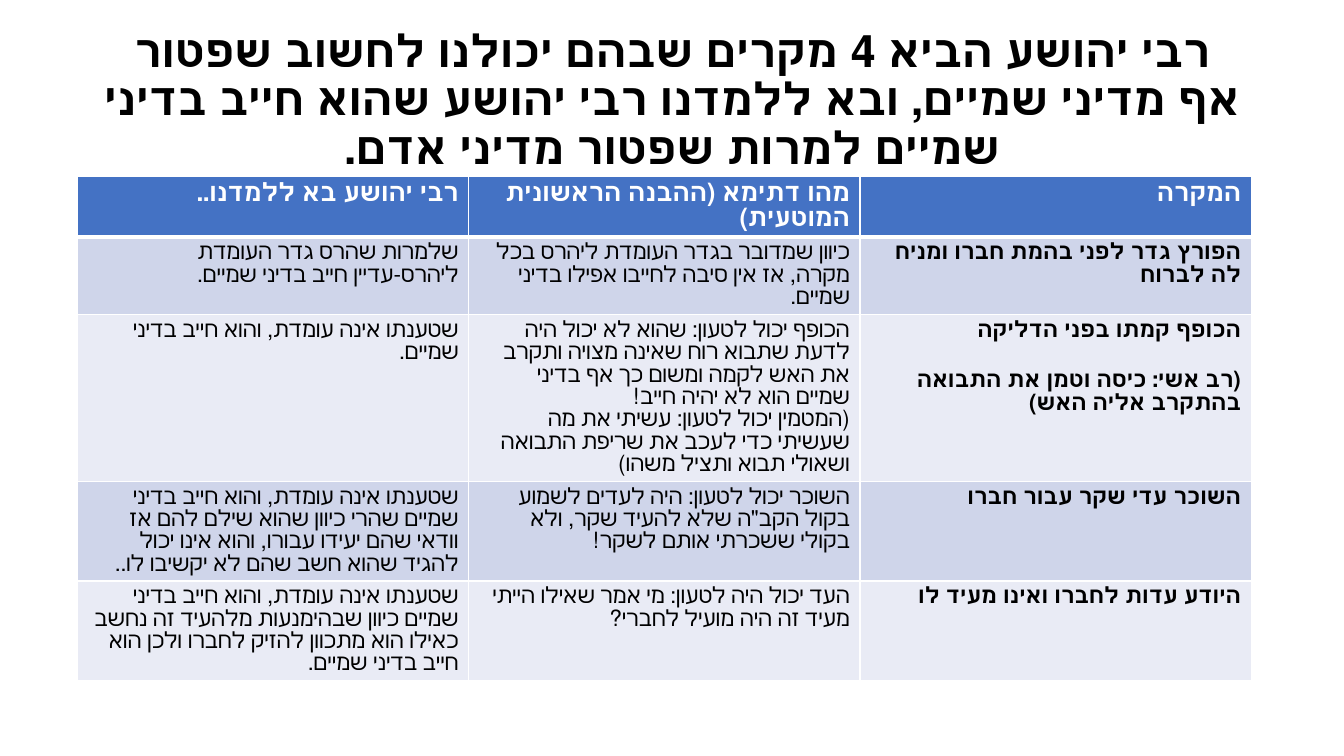
from dataclasses import dataclass

from lxml import etree
from pptx import Presentation
from pptx.dml.color import RGBColor
from pptx.enum.text import MSO_ANCHOR, PP_ALIGN
from pptx.oxml.ns import qn
from pptx.util import Inches, Pt

CENTER, RIGHT = PP_ALIGN.CENTER, PP_ALIGN.RIGHT
MIDDLE = MSO_ANCHOR.MIDDLE

TITLE = "רבי יהושע הביא 4 מקרים שבהם יכולנו לחשוב שפטור אף מדיני שמיים, ובא ללמדנו רבי יהושע שהוא חייב בדיני שמיים למרות שפטור מדיני אדם."

HEADER = ("רבי יהושע בא ללמדנו..", "מהו דתימא (ההבנה הראשונית המוטעית)", "המקרה")
CASES = [
    (
        "שלמרות שהרס גדר העומדת ליהרס-עדיין חייב בדיני שמיים.",
        "כיוון שמדובר בגדר העומדת ליהרס בכל מקרה, אז אין סיבה לחייבו אפילו בדיני שמיים.",
        "הפורץ גדר לפני בהמת חברו ומניח לה לברוח",
    ),
    (
        "שטענתו אינה עומדת, והוא חייב בדיני שמיים.",
        "הכופף יכול לטעון: שהוא לא יכול היה לדעת שתבוא רוח שאינה מצויה ותקרב את האש לקמה ומשום כך אף בדיני שמיים הוא לא יהיה חייב!\n"
        "(המטמין יכול לטעון: עשיתי את מה שעשיתי כדי לעכב את שריפת התבואה ושאולי תבוא ותציל משהו)",
        "הכופף קמתו בפני הדליקה\n(רב אשי: כיסה וטמן את התבואה בהתקרב אליה האש)",
    ),
    (
        "שטענתו אינה עומדת, והוא חייב בדיני שמיים שהרי כיוון שהוא שילם להם אז וודאי שהם יעידו עבורו, והוא אינו יכול להגיד שהוא חשב שהם לא יקשיבו לו..",
        "השוכר יכול לטעון: היה לעדים לשמוע בקול הקב\"ה שלא להעיד שקר, ולא בקולי ששכרתי אותם לשקר!",
        "השוכר עדי שקר עבור חברו",
    ),
    (
        "שטענתו אינה עומדת, והוא חייב בדיני שמיים כיוון שבהימנעות מלהעיד זה נחשב כאילו הוא מתכוון להזיק לחברו ולכן הוא חייב בדיני שמיים.",
        "העד יכול היה לטעון: מי אמר שאילו הייתי מעיד זה היה מועיל לחברי?",
        "היודע עדות לחברו ואינו מעיד לו",
    ),
]
ROW_HEIGHTS = (0.59, 0.77, 1.65, 0.98, 0.99)
COLUMN_WIDTH = 3.88
CASE_COLUMN = len(HEADER) - 1


@dataclass(frozen=True)
class Theme:
    font: str = "Calibri"
    title_size: int = 32
    header_size: int = 18
    body_size: int = 16
    case_gap: int = 20
    dark: str = "000000"
    light: str = "FFFFFF"
    header_fill: str = "4472C4"
    bands: tuple = ("CFD5EA", "E9EBF5")
    border: int = 1
    header_border: int = 3


THEME = Theme()


def format_text(frame, align, size, color, bold, line_spacing):
    for para in frame.paragraphs:
        para.alignment = align
        para.line_spacing = line_spacing
        para._p.get_or_add_pPr().set("rtl", "1")
        for span in para.runs:
            span.font.name = THEME.font
            span.font.size = Pt(size)
            span.font.bold = bold
            span.font.color.rgb = RGBColor.from_string(color)


def set_borders(cell, top, bottom):
    properties = cell._tc.get_or_add_tcPr()
    widths = {"lnL": THEME.border, "lnR": THEME.border, "lnT": top, "lnB": bottom}
    for side, width in widths.items():
        line = etree.SubElement(properties, qn(f"a:{side}"), w=str(Pt(width)))
        fill = etree.SubElement(line, qn("a:solidFill"))
        etree.SubElement(fill, qn("a:srgbClr"), val=THEME.light)


def add_title(page):
    box = page.shapes.add_textbox(Inches(0.92), Inches(0.28), Inches(11.5), Inches(1.45))
    frame = box.text_frame
    frame.word_wrap = True
    frame.vertical_anchor = MIDDLE
    frame.text = TITLE
    format_text(frame, CENTER, THEME.title_size, THEME.dark, True, 0.9)


def add_cases(page):
    rows = [HEADER, *CASES]
    table = page.shapes.add_table(
        len(rows), len(HEADER), Inches(0.77), Inches(1.75),
        Inches(COLUMN_WIDTH * len(HEADER)), Inches(sum(ROW_HEIGHTS)),
    ).table
    for column in table.columns:
        column.width = Inches(COLUMN_WIDTH)
    for row_index, (row, height) in enumerate(zip(rows, ROW_HEIGHTS)):
        table.rows[row_index].height = Inches(height)
        is_header = row_index == 0
        fill = THEME.header_fill if is_header else THEME.bands[(row_index - 1) % 2]
        size = THEME.header_size if is_header else THEME.body_size
        color = THEME.light if is_header else THEME.dark
        top = THEME.header_border if row_index == 1 else THEME.border
        bottom = THEME.header_border if is_header else THEME.border
        for column_index, text in enumerate(row):
            cell = table.cell(row_index, column_index)
            is_case = column_index == CASE_COLUMN
            cell.text_frame.text = text
            format_text(cell.text_frame, RIGHT, size, color, is_header or is_case, Pt(size))
            if is_case:
                for para in cell.text_frame.paragraphs[1:]:
                    para.space_before = Pt(THEME.case_gap)
            set_borders(cell, top, bottom)
            cell.fill.solid()
            cell.fill.fore_color.rgb = RGBColor.from_string(fill)


def main():
    deck = Presentation()
    deck.slide_width, deck.slide_height = Inches(13.33), Inches(7.5)
    page = deck.slides.add_slide(deck.slide_layouts[6])
    add_title(page)
    add_cases(page)
    deck.save("out.pptx")


if __name__ == "__main__":
    main()
